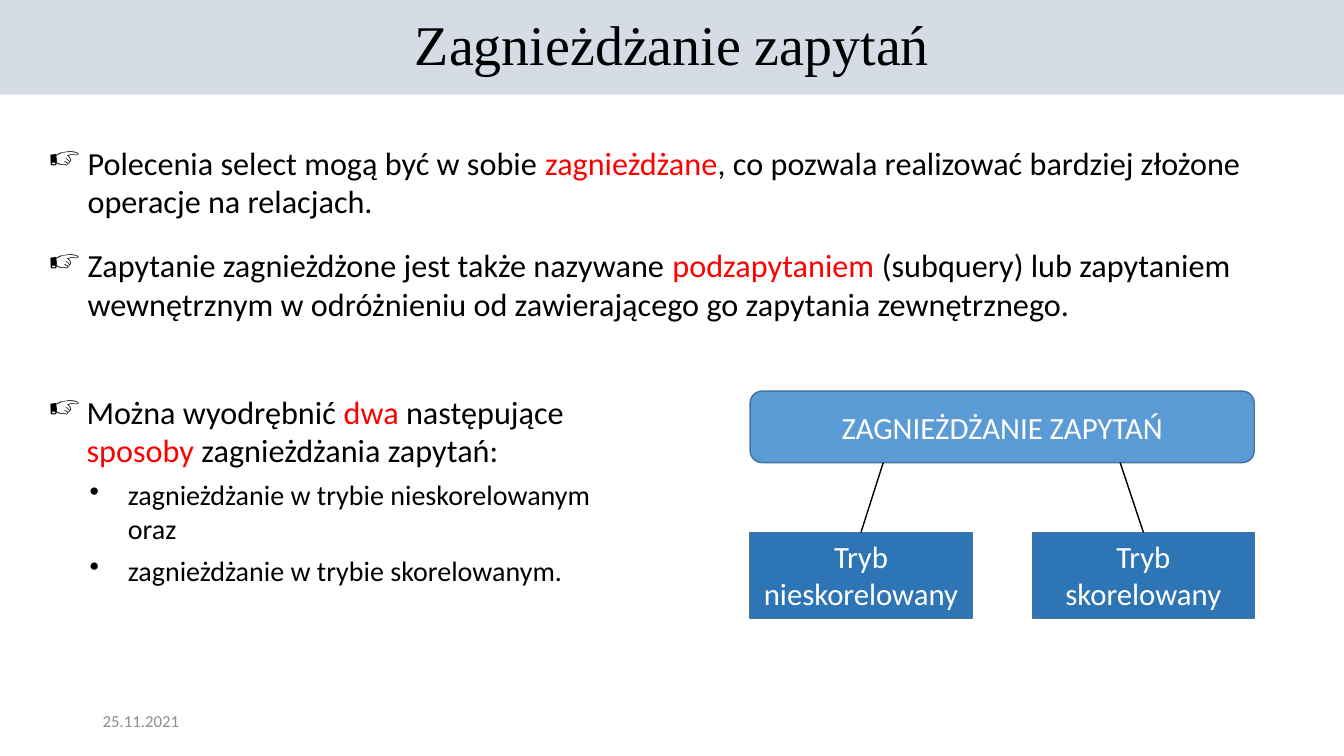
import pptx
import pptx.util
import pptx.dml.color
import pptx.enum.shapes
import pptx.enum.text
import pptx.oxml
import pptx.oxml.ns
from dataclasses import dataclass

Inches = pptx.util.Inches
Pt = pptx.util.Pt
SHAPE = pptx.enum.shapes.MSO_SHAPE
ALIGN = pptx.enum.text.PP_ALIGN
ANCHOR = pptx.enum.text.MSO_ANCHOR


@dataclass(frozen=True)
class Theme:
    title_font: str = "Times New Roman"
    body_font: str = "Calibri"
    title_size: int = 40
    body_size: int = 23
    sub_size: int = 20
    box_size: int = 22
    date_size: int = 12
    ink: str = "000000"
    accent: str = "FF0000"
    muted: str = "8C8C8C"
    light: str = "FFFFFF"
    band: str = "D6DCE5"
    header: str = "5B9BD5"
    box: str = "2E75B6"
    outline: str = "43739E"


def rgb(value):
    return pptx.dml.color.RGBColor.from_string(value)


class Deck:
    def __init__(self, theme):
        self.theme = theme
        self.prs = pptx.Presentation()
        self.prs.slide_width, self.prs.slide_height = Inches(13.33), Inches(7.5)
        self.s = self.prs.slides.add_slide(self.prs.slide_layouts[5])

    def run(self, p, text, size, color, font=None):
        r = p.add_run()
        r.text = text
        r.font.size = Pt(size)
        r.font.name = font or self.theme.body_font
        r.font.color.rgb = rgb(color)

    def title(self, text, height):
        sp = self.s.shapes.title
        sp.left, sp.top = 0, 0
        sp.width, sp.height = self.prs.slide_width, Inches(height)
        sp.fill.solid()
        sp.fill.fore_color.rgb = rgb(self.theme.band)
        tf = sp.text_frame
        tf.auto_size = pptx.enum.text.MSO_AUTO_SIZE.NONE
        tf.vertical_anchor = ANCHOR.MIDDLE
        p = tf.paragraphs[0]
        p.alignment, p.line_spacing = ALIGN.CENTER, 0.9
        self.run(p, text, self.theme.title_size, self.theme.ink, self.theme.title_font)

    def text_box(self, x, y, w, h):
        tf = self.s.shapes.add_textbox(Inches(x), Inches(y), Inches(w), Inches(h)).text_frame
        tf.word_wrap = True
        return tf

    def bullets(self, x, y, w, h, items):
        """Each item: mark, left indent, hang, space before, size, text with *accents*."""
        tf = self.text_box(x, y, w, h)
        for i, (mark, indent, hang, before, size, text) in enumerate(items):
            p = tf.add_paragraph() if i else tf.paragraphs[0]
            p.space_before = Pt(before)
            pPr = p._p.get_or_add_pPr()
            pPr.set("marL", str(Inches(indent)))
            pPr.set("indent", str(-Inches(hang)))
            bu = pptx.oxml.parse_xml(f'<a:buChar {pptx.oxml.ns.nsdecls("a")} char="{mark}"/>')
            pPr.append(bu)
            for n, part in enumerate(text.split("*")):
                self.run(p, part, size, self.theme.accent if n % 2 else self.theme.ink)

    def date(self, x, y, w, h, text):
        tf = self.text_box(x, y, w, h)
        tf.vertical_anchor = ANCHOR.MIDDLE
        self.run(tf.paragraphs[0], text, self.theme.date_size, self.theme.muted)

    def box(self, kind, x, y, w, h, fill, text):
        sp = self.s.shapes.add_shape(kind, Inches(x), Inches(y), Inches(w), Inches(h))
        sp.shadow.inherit = False
        sp.fill.solid()
        sp.fill.fore_color.rgb = rgb(fill)
        sp.line.color.rgb = rgb(self.theme.outline)
        sp.line.width = Pt(1)
        tf = sp.text_frame
        tf.word_wrap = True
        tf.vertical_anchor = ANCHOR.MIDDLE
        p = tf.paragraphs[0]
        p.alignment = ALIGN.CENTER
        self.run(p, text, self.theme.box_size, self.theme.light)
        return sp

    def link(self, x, y, target):
        """Line from a point to the top middle of the target box."""
        c = self.s.shapes.add_connector(
            pptx.enum.shapes.MSO_CONNECTOR.STRAIGHT, Inches(x), Inches(y),
            target.left + target.width // 2, target.top)
        c.end_connect(target, 0)
        c.line.color.rgb = rgb(self.theme.ink)
        c.line.width = Pt(1)
        effects = pptx.oxml.parse_xml(f'<a:effectLst {pptx.oxml.ns.nsdecls("a")}/>')
        c._element.spPr.append(effects)


def main():
    theme = Theme()
    deck = Deck(theme)
    deck.title("Zagnieżdżanie zapytań", 0.94)

    # Explanatory text
    hand, dot = "☞", "•"
    deck.bullets(0.38, 1.37, 12.08, 1.9, [
        (hand, 0.39, 0.39, 12, theme.body_size,
         "Polecenia select mogą być w sobie *zagnieżdżane*, co pozwala realizować "
         "bardziej złożone operacje na relacjach."),
        (hand, 0.39, 0.39, 18, theme.body_size,
         "Zapytanie zagnieżdżone jest także nazywane *podzapytaniem* (subquery) lub zapytaniem "
         "wewnętrznym w odróżnieniu od zawierającego go zapytania zewnętrznego."),
    ])
    deck.date(0.92, 6.95, 3, 0.4, "25.11.2021")
    deck.bullets(0.38, 3.84, 5.92, 2.05, [
        (hand, 0.38, 0.38, 6, theme.body_size,
         "Można wyodrębnić *dwa* następujące *sposoby* zagnieżdżania zapytań:"),
        (dot, 0.79, 0.38, 6, theme.sub_size, "zagnieżdżanie w trybie nieskorelowanym oraz"),
        (dot, 0.79, 0.38, 6, theme.sub_size, "zagnieżdżanie w trybie skorelowanym."),
    ])

    # Diagram: header and its two modes
    left, top, width, height = 7.44, 3.88, 5, 0.71
    mode_width = 2.2
    deck.box(SHAPE.ROUNDED_RECTANGLE, left, top, width, height,
             theme.header, "ZAGNIEŻDŻANIE ZAPYTAŃ")
    modes = [("Tryb nieskorelowany", left, 8.76),
             ("Tryb skorelowany", left + width - mode_width, 11.11)]
    for text, x, link_x in modes:
        mode = deck.box(SHAPE.RECTANGLE, x, 5.28, mode_width, 0.85, theme.box, text)
        deck.link(link_x, top + height, mode)

    deck.prs.save("out.pptx")


if __name__ == "__main__":
    main()
